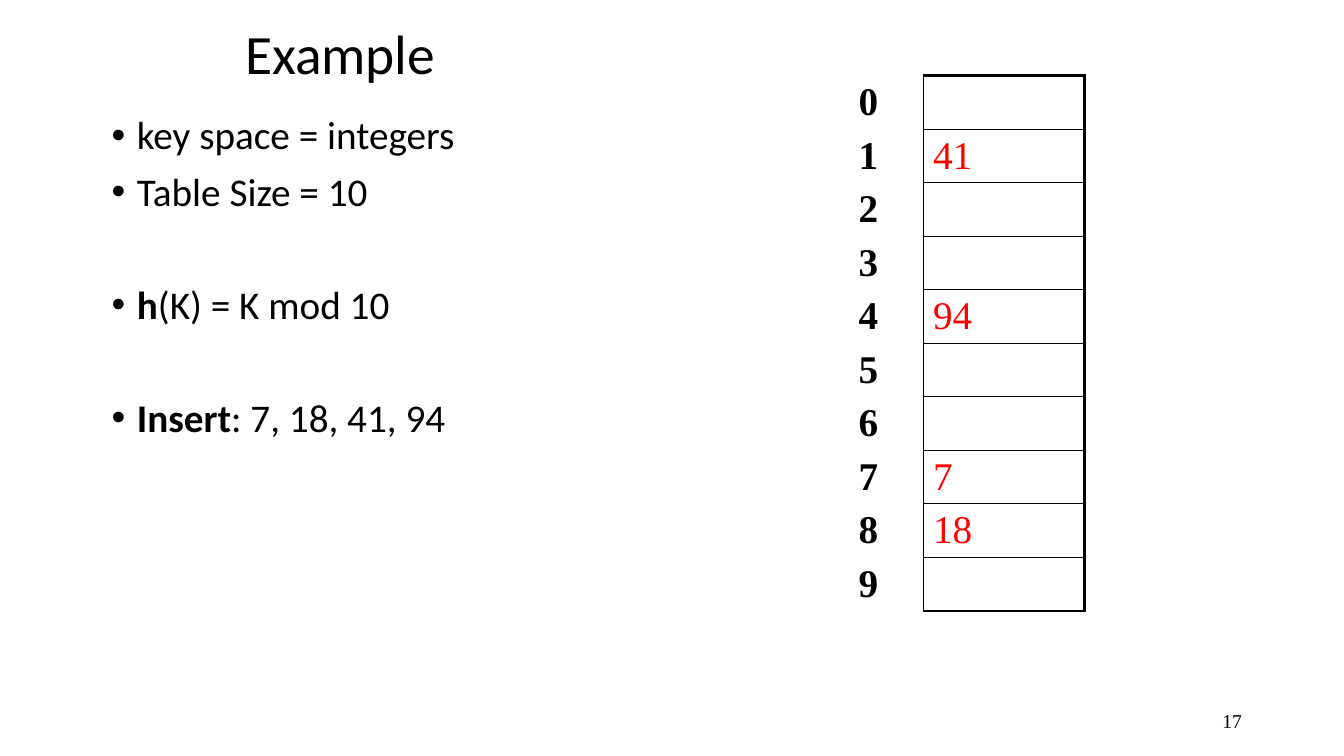
import dataclasses
import typing

import pptx
import pptx.dml.color
import pptx.enum.text
import pptx.oxml
import pptx.oxml.ns
import pptx.util

Pt = pptx.util.Pt
ANCHOR = pptx.enum.text.MSO_ANCHOR
ALIGN = pptx.enum.text.PP_ALIGN
BLACK, RED = "000000", "FF0000"
SANS, SERIF = "Calibri", "Times New Roman"


@dataclasses.dataclass
class Run:
    text: str
    bold: bool = False


@dataclasses.dataclass
class Bullet:
    runs: list[Run]
    space_before: float = 10


BULLETS = [
    Bullet([Run("key space = integers")]),
    Bullet([Run("Table Size = 10")]),
    Bullet([Run("h", True), Run("(K) = K mod 10")], 50.5),
    Bullet([Run("Insert", True), Run(": 7, 18, 41, 94")], 50.5),
]
TABLE_SIZE = 10
KEYS = [7, 18, 41, 94]
ROW_HEIGHT = 38.25
COLUMN_WIDTHS = [53.2, 115.2]


def set_format(target: typing.Any, values: dict[str, typing.Any]) -> None:
    for name, value in values.items():
        setattr(target, name, value)


def color(value: str) -> pptx.dml.color.RGBColor:
    return pptx.dml.color.RGBColor.from_string(value)


def add_run(paragraph: typing.Any, run: Run, size: float, font: str, fill: str = BLACK) -> None:
    text_run = paragraph.add_run()
    text_run.text = run.text
    set_format(text_run.font, {"size": Pt(size), "name": font, "bold": run.bold})
    text_run.font.color.rgb = color(fill)


def add_text_box(slide: typing.Any, left: float, top: float, width: float, height: float) -> typing.Any:
    shape = slide.shapes.add_textbox(Pt(left), Pt(top), Pt(width), Pt(height))
    shape.text_frame.word_wrap = True
    return shape.text_frame


def add_bullet(paragraph: typing.Any, bullet: Bullet) -> None:
    set_format(paragraph, {"line_spacing": 0.9, "space_before": Pt(bullet.space_before)})
    for run in bullet.runs:
        add_run(paragraph, run, 28, SANS)
    properties = paragraph._p.get_or_add_pPr()
    properties.set("marL", str(Pt(18)))
    properties.set("indent", str(-Pt(18)))
    namespace = pptx.oxml.ns.nsdecls("a")
    properties.append(pptx.oxml.parse_xml(f'<a:buFont {namespace} typeface="Arial"/>'))
    properties.append(pptx.oxml.parse_xml(f'<a:buChar {namespace} char="•"/>'))


def set_borders(cell: typing.Any, widths: dict[str, float]) -> None:
    """Draw the sides named in widths and clear the others."""
    properties = cell._tc.get_or_add_tcPr()
    for side in "LRTB":
        width = widths.get(side, 0)
        paint = f'<a:solidFill><a:srgbClr val="{BLACK}"/></a:solidFill>' if width else "<a:noFill/>"
        properties.append(pptx.oxml.parse_xml(
            f'<a:ln{side} {pptx.oxml.ns.nsdecls("a")} w="{Pt(width)}">{paint}</a:ln{side}>'))


def fill_cell(cell: typing.Any, run: Run, fill: str, borders: dict[str, float]) -> None:
    set_format(cell, {"vertical_anchor": ANCHOR.MIDDLE, "margin_top": Pt(2), "margin_bottom": Pt(2)})
    if run.text:
        add_run(cell.text_frame.paragraphs[0], run, 28, SERIF, fill)
    set_borders(cell, borders)
    cell.fill.background()


def add_hash_table(slide: typing.Any) -> None:
    table = slide.shapes.add_table(
        TABLE_SIZE, 2, Pt(606.2), Pt(54), Pt(sum(COLUMN_WIDTHS)), Pt(TABLE_SIZE * ROW_HEIGHT)).table
    set_format(table, {"first_row": False, "horz_banding": False})
    for column, width in zip(table.columns, COLUMN_WIDTHS):
        column.width = Pt(width)
    slots = {key % TABLE_SIZE: str(key) for key in KEYS}
    for index, row in enumerate(table.rows):
        row.height = Pt(ROW_HEIGHT)
        top = 2.25 if index == 0 else 1
        bottom = 2.25 if index == TABLE_SIZE - 1 else 1
        fill_cell(row.cells[0], Run(str(index), True), BLACK, {"R": 1})
        fill_cell(row.cells[1], Run(slots.get(index, "")), RED,
                  {"L": 1, "R": 2.25, "T": top, "B": bottom})


def main() -> None:
    presentation = pptx.Presentation()
    set_format(presentation, {"slide_width": Pt(960), "slide_height": Pt(540)})
    slide = presentation.slides.add_slide(presentation.slide_layouts[5])

    # Title
    title = slide.shapes.title
    set_format(title, {"left": Pt(167.8), "top": Pt(13.7), "width": Pt(612), "height": Pt(54)})
    set_format(title.text_frame, {"vertical_anchor": ANCHOR.MIDDLE, "word_wrap": True,
                                  "auto_size": pptx.enum.text.MSO_AUTO_SIZE.NONE})
    heading = title.text_frame.paragraphs[0]
    set_format(heading, {"alignment": ALIGN.LEFT, "line_spacing": 0.9})
    add_run(heading, Run("Example"), 39.6, SANS)

    # Bullets
    body = add_text_box(slide, 72.7, 79.2, 533.5, 357)
    for position, bullet in enumerate(BULLETS):
        add_bullet(body.add_paragraph() if position else body.paragraphs[0], bullet)

    # Hash table
    add_hash_table(slide)

    # Slide number
    number = add_text_box(slide, 678.2, 500.4, 216, 28.8)
    number.vertical_anchor = ANCHOR.MIDDLE
    number.paragraphs[0].alignment = ALIGN.RIGHT
    add_run(number.paragraphs[0], Run("17"), 14, SERIF)

    presentation.save("out.pptx")


if __name__ == "__main__":
    main()
